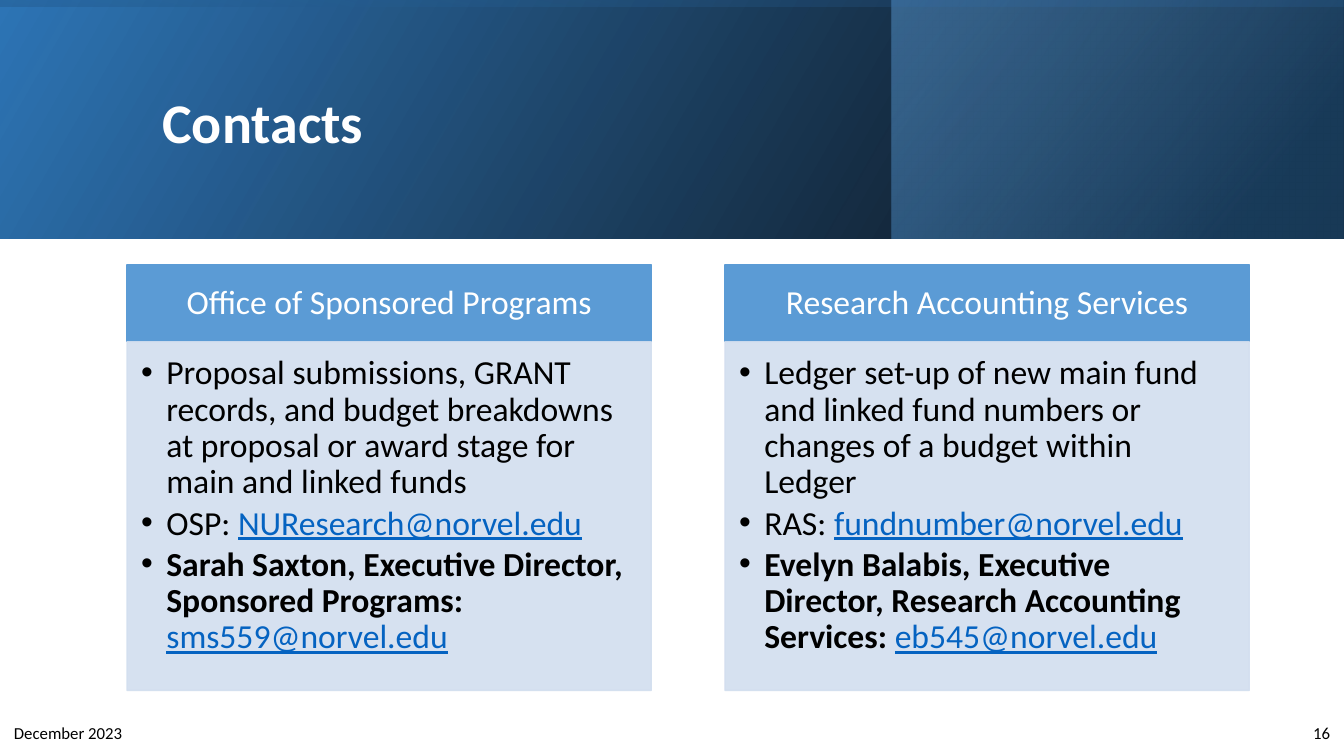
from lxml.etree import SubElement
from pptx import Presentation
from pptx.dml.color import RGBColor
from pptx.enum.shapes import MSO_SHAPE
from pptx.enum.text import MSO_ANCHOR, MSO_AUTO_SIZE, PP_ALIGN
from pptx.oxml import parse_xml
from pptx.oxml.ns import nsdecls, qn
from pptx.util import Inches, Pt

WHITE, BLACK = "FFFFFF", "000000"
BLUE, PALE, LINK = "5B9BD5", "D2DEEF", "0563C1"

# Heading, then bullets as (plain text, bold, address)
CARDS = [
    ("Office of Sponsored Programs", [
        ("Proposal submissions, GRANT records, and budget breakdowns "
         "at proposal or award stage for main and linked funds", False, ""),
        ("OSP: ", False, "NUResearch@norvel.edu"),
        ("Sarah Saxton, Executive Director, Sponsored Programs: ", True,
         "sms559@norvel.edu"),
    ]),
    ("Research Accounting Services", [
        ("Ledger set-up of new main fund and linked fund numbers "
         "or changes of a budget within Ledger", False, ""),
        ("RAS: ", False, "fundnumber@norvel.edu"),
        ("Evelyn Balabis, Executive Director, Research Accounting "
         "Services: ", True, "eb545@norvel.edu"),
    ]),
]


def color(code):
    return RGBColor.from_string(code)


def write(para, text, size=24, tint=BLACK, bold=False, under=False):
    """Add a run of text with its format."""
    run = para.add_run()
    run.text = text
    font = run.font
    font.name, font.size = "Calibri", Pt(size)
    font.bold, font.underline = bold, under
    font.color.rgb = color(tint)


def place(shape, left, top, width, height):
    shape.left, shape.top = Inches(left), Inches(top)
    shape.width, shape.height = Inches(width), Inches(height)


def frame(shape, anchor, insets=(0.1, 0.05, 0.1, 0.05)):
    """Set up the text frame and return it."""
    box = shape.text_frame
    box.word_wrap = True
    box.auto_size = MSO_AUTO_SIZE.NONE
    box.vertical_anchor = anchor
    (box.margin_left, box.margin_top,
     box.margin_right, box.margin_bottom) = map(Inches, insets)
    return box


def space(para, after=0, line=0.9):
    para.space_before, para.space_after = Pt(0), Pt(after)
    para.line_spacing = line


def panel(shape, tint, alpha=100):
    """Fill and outline a placeholder in one colour."""
    shape.fill.solid()
    shape.fill.fore_color.rgb = color(tint)
    shape.line.color.rgb = color(tint)
    shape.line.width = Pt(1)
    if alpha < 100:
        for node in shape.element.spPr.iter(qn("a:srgbClr")):
            SubElement(node, qn("a:alpha"), val=str(alpha * 1000))


def band(slide, spot, stops, angle, turn=0):
    """Add a mirrored rectangle with a gradient of (place, colour, alpha)."""
    shape = slide.shapes.add_shape(MSO_SHAPE.RECTANGLE, *map(Inches, spot))
    shape.shadow.inherit = False
    shape.line.fill.background()
    shape.rotation = turn
    props = shape.element.spPr
    props.find(qn("a:xfrm")).set("flipH", "1")
    marks = "".join(
        f'<a:gs pos="{pos * 1000}"><a:srgbClr val="{tint}">'
        f'<a:alpha val="{alpha * 1000}"/></a:srgbClr></a:gs>'
        for pos, tint, alpha in stops)
    shape.fill.gradient()
    props.replace(props.find(qn("a:gradFill")), parse_xml(
        f'<a:gradFill {nsdecls("a")} rotWithShape="1"><a:gsLst>{marks}'
        f'</a:gsLst><a:lin ang="{angle * 60000}" scaled="0"/></a:gradFill>'))


def bullet(para):
    para.level = 1
    props = para._p.get_or_add_pPr()
    props.set("marL", str(Inches(0.25)))
    props.set("indent", str(-Inches(0.25)))
    SubElement(props, qn("a:buFont"), typeface="Arial")
    SubElement(props, qn("a:buChar"), char="•")


def card(head, body, left, title, items):
    """Fill a heading placeholder and the list placeholder below it."""
    place(head, left, 2.63, 5.2, 0.76)
    panel(head, BLUE)
    para = frame(head, MSO_ANCHOR.MIDDLE, (0.19, 0.11, 0.19, 0.11)).paragraphs[0]
    para.alignment = PP_ALIGN.CENTER
    space(para)
    write(para, title, tint=WHITE)

    place(body, left, 3.39, 5.2, 3.46)
    panel(body, PALE, 90)
    box = frame(body, MSO_ANCHOR.TOP, (0.14, 0.14, 0.19, 0.21))
    for num, (text, bold, mail) in enumerate(items):
        para = box.add_paragraph() if num else box.paragraphs[0]
        space(para, after=3.6)
        bullet(para)
        write(para, text, bold=bold)
        if mail:
            write(para, mail, tint=LINK, under=True)


def footer(slide, text, left, width, align):
    shape = slide.shapes.add_textbox(
        Inches(left), Inches(7.07), Inches(width), Inches(0.4))
    para = frame(shape, MSO_ANCHOR.MIDDLE).paragraphs[0]
    para.alignment = align
    space(para, after=6, line=1.0)
    write(para, text, size=12)


def main():
    deck = Presentation()
    deck.slide_width, deck.slide_height = Inches(13.33), Inches(7.5)
    slide = deck.slides.add_slide(deck.slide_layouts[4])
    title, *slots = slide.placeholders

    # Banner
    band(slide, (0, 0, 13.33, 2.37),
         [(0, BLACK, 96), (100, "2E75B6", 100)], 330)
    band(slide, (8.84, 0, 4.48, 2.37),
         [(19, "1F4E79", 68), (100, BLUE, 48)], 320)
    band(slide, (5.48, -5.48, 2.37, 13.33),
         [(23, "2E75B6", 16), (99, BLACK, 45)], 350, turn=270)

    # Title, raised above the banner
    slide.shapes._spTree.append(title.element)
    place(title, 1.51, 0.38, 10.63, 1.72)
    para = frame(title, MSO_ANCHOR.MIDDLE).paragraphs[0]
    para.alignment = PP_ALIGN.LEFT
    space(para)
    write(para, "Contacts", size=40, tint=WHITE, bold=True)

    # Contact cards
    for num, (name, items) in enumerate(CARDS):
        head, body = slots[2 * num:2 * num + 2]
        card(head, body, 1.26 + 5.93 * num, name, items)

    # Footer
    footer(slide, "December 2023", 0.04, 3, PP_ALIGN.LEFT)
    footer(slide, "16", 12.8, 0.49, PP_ALIGN.RIGHT)
    deck.save("out.pptx")


if __name__ == "__main__":
    main()
